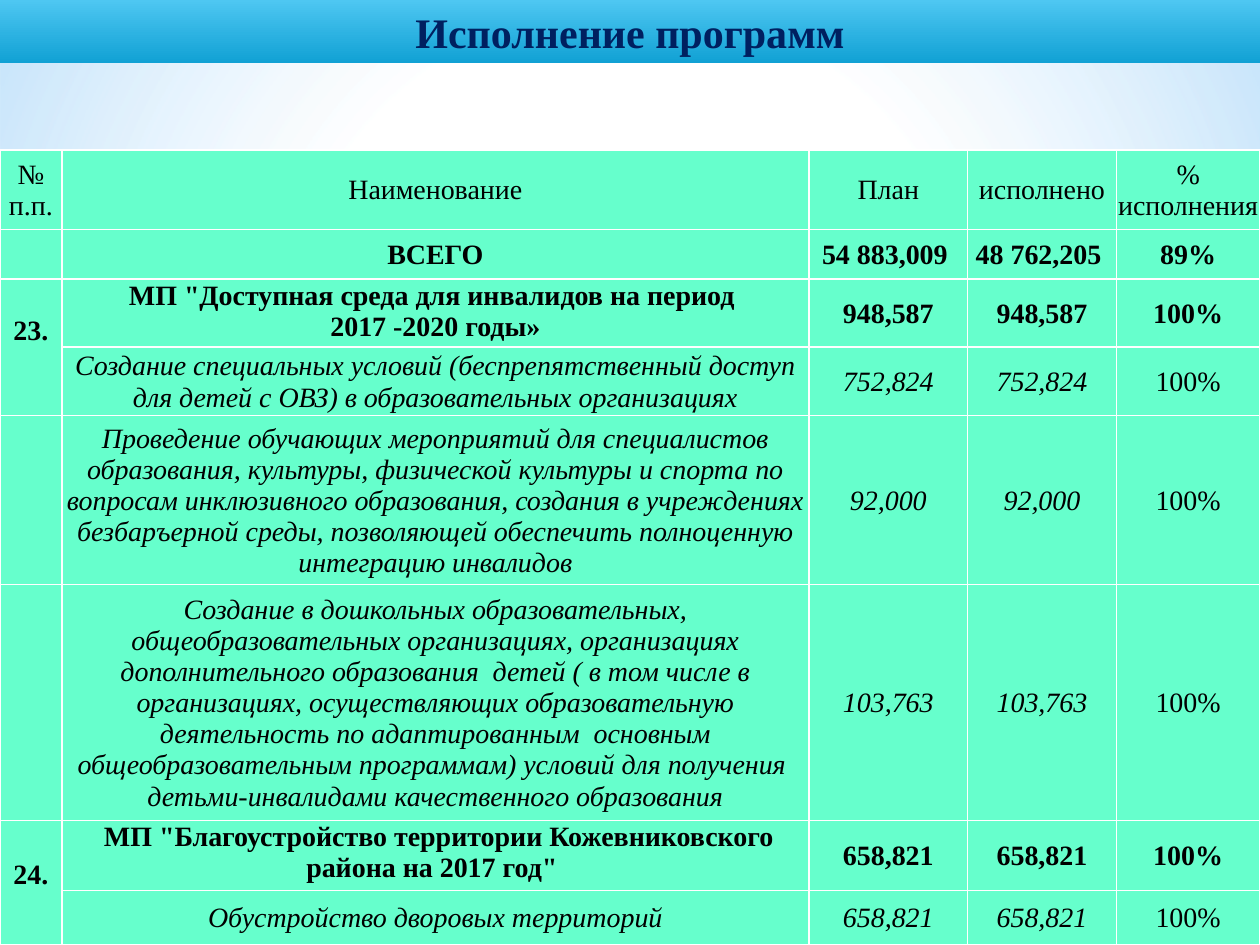
import dataclasses
import typing

import lxml.etree
import pptx
import pptx.dml.color
import pptx.enum.shapes
import pptx.enum.text
import pptx.oxml.ns
import pptx.util

Pt = pptx.util.Pt
qn = pptx.oxml.ns.qn
ALIGN = pptx.enum.text.PP_ALIGN
ANCHOR = pptx.enum.text.MSO_ANCHOR


@dataclasses.dataclass(frozen=True)
class Theme:
    font: str = "Times New Roman"
    title_size: float = 24
    body_size: float = 16
    title: str = "002060"
    body: str = "000000"
    cell: str = "66FFCC"
    border: str = "FFFFFF"
    band_top: str = "4EC7F2"
    band_bottom: str = "11A1D4"
    glow: tuple = ((0, "FFFFFF", 89), (48, "FFFFFF", 62), (100, "B4DCFA", 79))


class Style(typing.NamedTuple):
    bold: bool = False
    italic: bool = False
    italic_percent: bool = False
    name_anchor: typing.Any = ANCHOR.MIDDLE


HEADER = Style()
TOTAL = Style(bold=True)
PROGRAM = Style(bold=True, name_anchor=ANCHOR.TOP)
ACTIVITY = Style(italic=True)


class BudgetRow(typing.NamedTuple):
    height: float
    style: Style
    number: str
    name: str
    plan: str
    spent: str
    percent: str
    joins_above: bool = False
    joins_below: bool = False


THEME = Theme()
COLUMN_WIDTHS = (35.3, 427, 90.7, 85, 82)
BUDGET = (
    BudgetRow(45.4, HEADER, "№ п.п.", "Наименование", "План", "исполнено", "% исполнения"),
    BudgetRow(28.2, TOTAL, "", "ВСЕГО", "54 883,009 ", "48 762,205 ", "89%"),
    BudgetRow(39, PROGRAM, "23.",
              'МП "Доступная среда для инвалидов на период \n2017 -2020 годы»',
              "948,587", "948,587", "100%", joins_below=True),
    BudgetRow(39.2, ACTIVITY, "",
              "Создание специальных условий (беспрепятственный доступ для детей с ОВЗ) "
              "в образовательных организациях",
              "752,824", "752,824", "100%", joins_above=True),
    BudgetRow(96.6, ACTIVITY, "",
              "Проведение обучающих мероприятий для специалистов образования, культуры, "
              "физической культуры и спорта по вопросам инклюзивного образования, создания "
              "в учреждениях безбаръерной среды, позволяющей обеспечить полноценную "
              "интеграцию инвалидов",
              "92,000", "92,000", "100%"),
    BudgetRow(134.8, ACTIVITY, "",
              "Создание в дошкольных образовательных, общеобразовательных организациях, "
              "организациях дополнительного образования  детей ( в том числе в организациях, "
              "осуществляющих образовательную деятельность по адаптированным  основным "
              "общеобразовательным программам) условий для получения  детьми-инвалидами "
              "качественного образования",
              "103,763", "103,763", "100%"),
    BudgetRow(40, PROGRAM, "24.",
              ' МП "Благоустройство территории Кожевниковского района на 2017 год" ',
              "658,821", "658,821", "100%", joins_below=True),
    BudgetRow(31, ACTIVITY, "", "Обустройство дворовых территорий",
              "658,821", "658,821", "100%", joins_above=True),
)


def rgb(value: str) -> pptx.dml.color.RGBColor:
    return pptx.dml.color.RGBColor.from_string(value)


def write(frame, text: str, size: float, color: str, bold: bool, italic: bool) -> None:
    for index, line in enumerate(text.split("\n")):
        paragraph = frame.add_paragraph() if index else frame.paragraphs[0]
        paragraph.alignment = ALIGN.CENTER
        paragraph.font.size = Pt(size)
        if line:
            run = paragraph.add_run()
            run.text = line
            run.font.name = THEME.font
            run.font.size = Pt(size)
            run.font.bold = bold
            run.font.italic = italic
            run.font.color.rgb = rgb(color)


def draw_backdrop(slide, title) -> None:
    backdrop = slide.shapes.add_shape(
        pptx.enum.shapes.MSO_SHAPE.RECTANGLE, Pt(0), Pt(0), Pt(720), Pt(402))
    backdrop.shadow.inherit = False
    backdrop.line.fill.background()
    backdrop.fill.gradient()
    gradient = backdrop.element.spPr.find(qn("a:gradFill"))
    for child in list(gradient):
        gradient.remove(child)
    stops = lxml.etree.SubElement(gradient, qn("a:gsLst"))
    for position, color, opacity in THEME.glow:
        stop = lxml.etree.SubElement(stops, qn("a:gs"), pos=str(position * 1000))
        tone = lxml.etree.SubElement(stop, qn("a:srgbClr"), val=color)
        lxml.etree.SubElement(tone, qn("a:alpha"), val=str(opacity * 1000))
    radial = lxml.etree.SubElement(gradient, qn("a:path"), path="circle")
    lxml.etree.SubElement(radial, qn("a:fillToRect"),
                          {side: "50000" for side in "ltrb"})
    title.element.addprevious(backdrop.element)


def draw_title(title) -> None:
    title.left, title.top, title.width, title.height = Pt(0), Pt(0), Pt(720), Pt(36)
    title.fill.gradient()
    title.fill.gradient_angle = 270
    for stop, color in zip(title.fill.gradient_stops, (THEME.band_top, THEME.band_bottom)):
        stop.color.rgb = rgb(color)
    title.text_frame.auto_size = pptx.enum.text.MSO_AUTO_SIZE.NONE
    title.text_frame.vertical_anchor = ANCHOR.MIDDLE
    write(title.text_frame, "Исполнение программ", THEME.title_size, THEME.title, True, False)


def draw_borders(cell, open_sides: set[str]) -> None:
    properties = cell._tc.get_or_add_tcPr()
    for index, side in enumerate("LRTB"):
        border = lxml.etree.Element(qn(f"a:ln{side}"), w=str(int(Pt(1))))
        if side in open_sides:
            lxml.etree.SubElement(border, qn("a:noFill"))
        else:
            fill = lxml.etree.SubElement(border, qn("a:solidFill"))
            lxml.etree.SubElement(fill, qn("a:srgbClr"), val=THEME.border)
        properties.insert(index, border)


def draw_cell(cell, text: str, bold: bool, italic: bool, anchor, open_sides: set[str]) -> None:
    cell.margin_left = cell.margin_top = cell.margin_right = Pt(0.72)
    cell.margin_bottom = Pt(0)
    cell.vertical_anchor = anchor
    cell.fill.solid()
    cell.fill.fore_color.rgb = rgb(THEME.cell)
    write(cell.text_frame, text, THEME.body_size, THEME.body, bold, italic)
    draw_borders(cell, open_sides)


def draw_budget(slide) -> None:
    budget = slide.shapes.add_table(
        len(BUDGET), len(COLUMN_WIDTHS), Pt(0), Pt(85.8),
        Pt(sum(COLUMN_WIDTHS)), Pt(sum(row.height for row in BUDGET))).table
    budget.first_row = budget.horz_banding = False
    for column, width in zip(budget.columns, COLUMN_WIDTHS):
        column.width = Pt(width)
    for index, row in enumerate(BUDGET):
        budget.rows[index].height = Pt(row.height)
        style = row.style
        open_sides = {side for side, joined in
                      (("T", row.joins_above), ("B", row.joins_below)) if joined}
        number_anchor = ANCHOR.BOTTOM if style is PROGRAM else ANCHOR.MIDDLE
        cells = (
            (row.number, style.italic, number_anchor, open_sides),
            (row.name, style.italic, style.name_anchor, set()),
            (row.plan, style.italic, ANCHOR.MIDDLE, set()),
            (row.spent, style.italic, ANCHOR.MIDDLE, set()),
            (row.percent, style.italic_percent, ANCHOR.MIDDLE, set()),
        )
        for column, (text, italic, anchor, sides) in enumerate(cells):
            draw_cell(budget.cell(index, column), text, style.bold, italic, anchor, sides)


def main() -> None:
    presentation = pptx.Presentation()
    presentation.slide_width, presentation.slide_height = Pt(720), Pt(540)
    slide = presentation.slides.add_slide(presentation.slide_layouts[5])
    title = slide.shapes.title
    draw_backdrop(slide, title)
    draw_title(title)
    draw_budget(slide)
    presentation.save("out.pptx")


if __name__ == "__main__":
    main()
